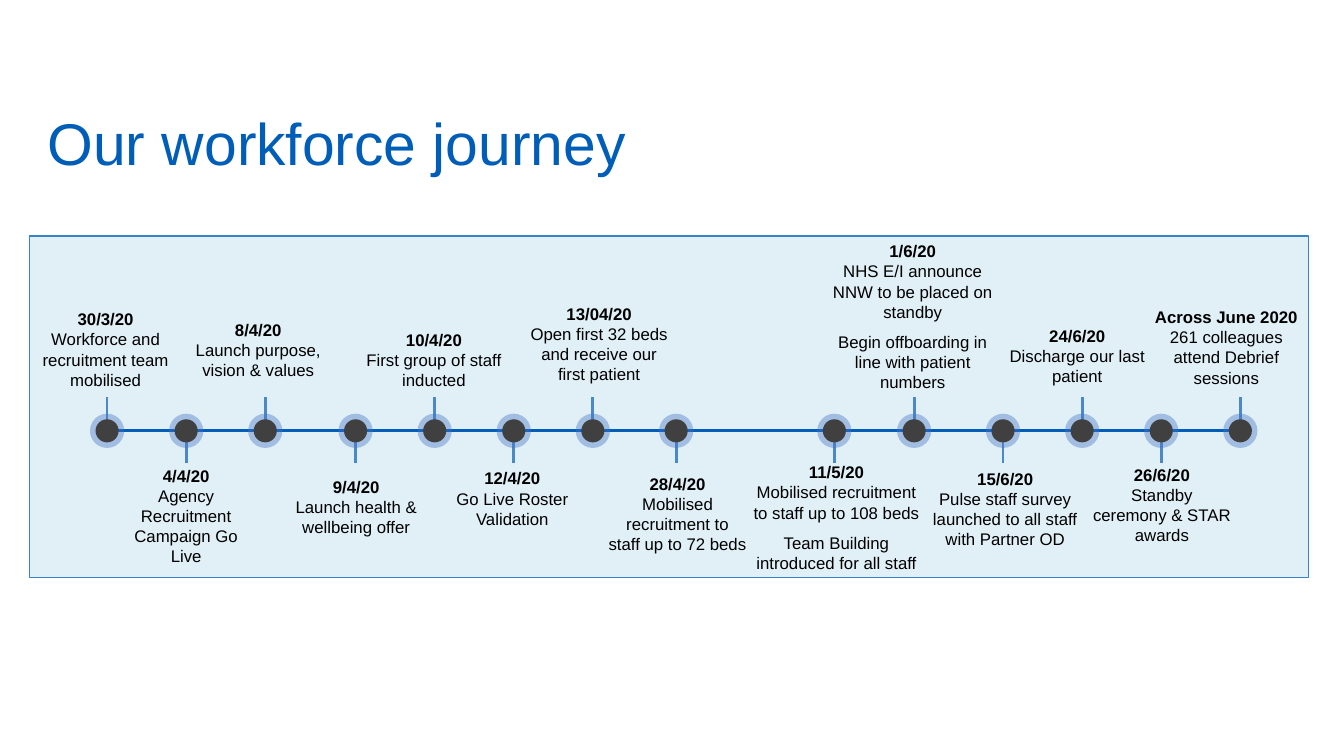
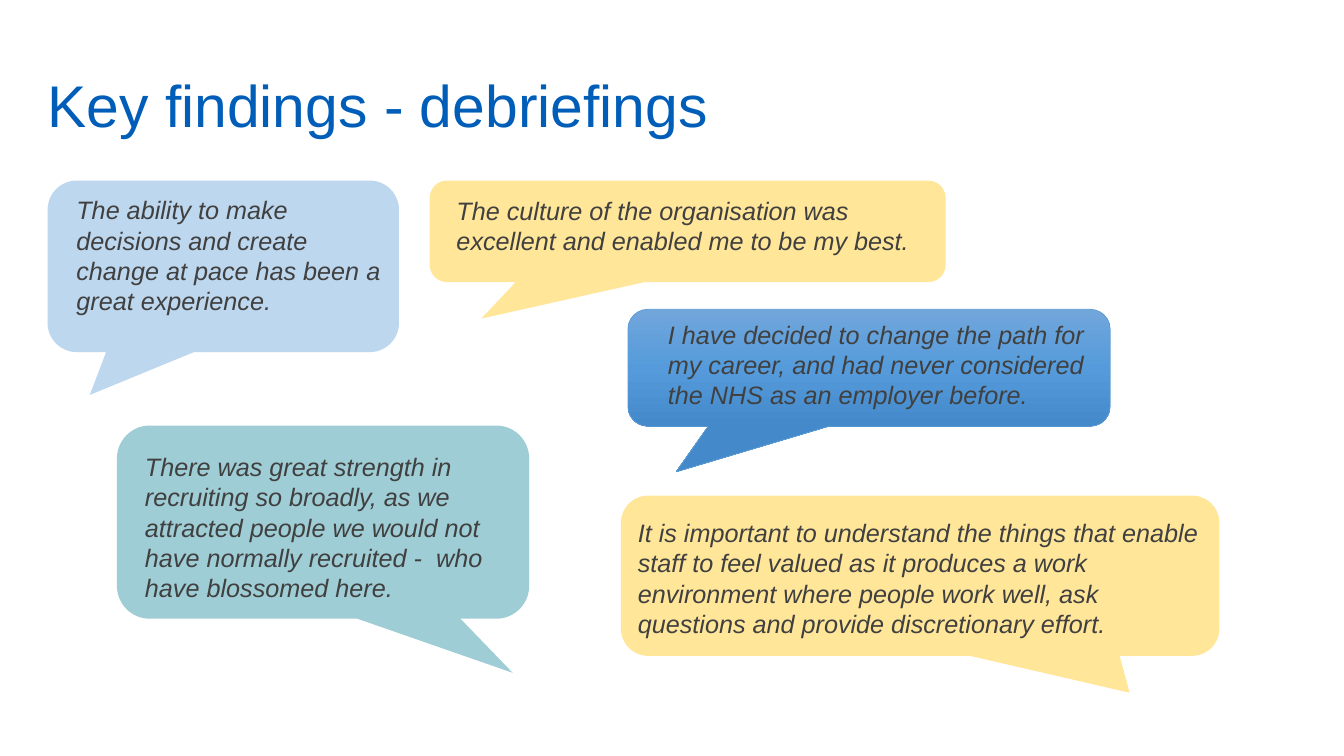
from lxml.etree import SubElement
from pptx import Presentation
from pptx.dml.color import RGBColor
from pptx.enum.shapes import MSO_CONNECTOR, MSO_SHAPE
from pptx.enum.text import MSO_ANCHOR, MSO_AUTO_SIZE, PP_ALIGN
from pptx.oxml.ns import qn
from pptx.util import Pt

FONT = "Arial"
COLOURS = {
    "title": "005EB8", "text": "000000", "dark": "404040",
    "panel": "E0F0F6", "panel_edge": "3783C7", "stem": "4B88C7",
    "axis": "005DB8", "halo": "4472C4", "teal": "9FCDD5",
    "pale_blue": "BDD7EE", "yellow": "FFE699", "blue_edge": "5B9BD5",
}
BLUE_GRADIENT = [(0, "71A6DB"), (50, "559BDB"), (100, "448ACA")]

# date, paragraphs, node x, label centre x and y, label width, label lines
# (x and y are measured from the corner of the timeline panel)
EVENTS = [
    ("30/3/20", ["Workforce and recruitment team mobilised"], 55.5, 54.5, 81, 113, 4),
    ("4/4/20", ["Agency Recruitment Campaign Go Live"], 112, 112, 200, 113, 5),
    ("8/4/20", ["Launch purpose, vision & values"], 168.5, 163.5, 81.5, 118, 3),
    ("9/4/20", ["Launch health & wellbeing offer"], 233, 233.5, 193.5, 113, 3),
    ("10/4/20", ["First group of staff inducted"], 289.5, 289, 88.5, 113, 3),
    ("12/4/20", ["Go Live Roster Validation"], 346, 345, 187.5, 113, 3),
    ("13/04/20", ["Open first 32 beds and receive our first patient"],
     402.5, 407, 77, 113, 4),
    ("28/4/20", ["Mobilised recruitment to staff up to 72 beds"],
     462, 463, 198.5, 113, 4),
    ("11/5/20", ["Mobilised recruitment to staff up to 108 beds",
                 "Team Building introduced for all staff"], 575, 576.5, 201, 134, 5.5),
    ("1/6/20", ["NHS E/I announce NNW to be placed on standby",
                "Begin offboarding in line with patient numbers"],
     632, 631, 57.5, 138, 7.5),
    ("15/6/20", ["Pulse staff survey launched to all staff with Partner OD"],
     695.5, 697, 195, 120, 4),
    ("24/6/20", ["Discharge our last patient"], 752, 748.5, 85.5, 113, 3),
    ("26/6/20", ["Standby ceremony & STAR awards"], 808.5, 809, 192, 113, 4),
    ("Across June 2020", ["261 colleagues attend Debrief sessions"],
     865, 855, 79.5, 128, 4),
]
AXIS_Y = 139.25

# callout box, pointer, fill, text offset and width, quote
QUOTES = [
    ((83.5, 304, 294.5, 138), (0.46, 0.78), "teal", (13, 15), 268.5,
     "There was great strength in recruiting so broadly, as we attracted people "
     "we would not have normally recruited -  who have blossomed here."),
    ((34, 129, 251, 122.5), (-0.38, 0.75), "pale_blue", (13.5, 6.5), 237.5,
     "The ability to make decisions and create change at pace has been a great "
     "experience."),
    ((307, 129, 368.5, 72.5), (-0.4, 0.86), "yellow", (12, 7), 344,
     "The culture of the organisation was excellent and enabled me to be my best."),
    ((448.5, 221, 344.5, 83.5), (-0.4, 0.89), "gradient", (21.5, 3.5), 340,
     "I have decided to change the path for my career, and had never considered "
     "the NHS as an employer before."),
    ((443.5, 354, 427.5, 114.5), (0.35, 0.73), "yellow", (5, 12), 414.5,
     "It is important to understand the things that enable staff to feel valued "
     "as it produces a work environment where people work well, ask questions "
     "and provide discretionary effort."),
]


def colour(name):
    return RGBColor.from_string(COLOURS[name])


def style(para, size, name, bold=False, italic=False):
    for span in para.runs:
        font = span.font
        font.name, font.size = FONT, Pt(size)
        font.bold, font.italic = bold, italic
        font.color.rgb = colour(name)


def add_box(page, kind, left, top, width, height, fill):
    shape = page.shapes.add_shape(kind, Pt(left), Pt(top), Pt(width), Pt(height))
    shape.shadow.inherit = False
    shape.line.fill.background()
    if fill == "gradient":
        shape.fill.gradient()
        shape.fill.gradient_angle = 270
        stops = shape.fill._xPr.find(qn("a:gradFill")).find(qn("a:gsLst"))
        for stop in list(stops):
            stops.remove(stop)
        for position, value in BLUE_GRADIENT:
            stop = SubElement(stops, qn("a:gs"), pos=str(position * 1000))
            SubElement(stop, qn("a:srgbClr"), val=value)
    else:
        shape.fill.solid()
        shape.fill.fore_color.rgb = colour(fill)
    return shape


def add_edge(shape, name, width):
    shape.line.color.rgb = colour(name)
    shape.line.width = Pt(width)


def add_line(page, x1, y1, x2, y2, name, arrow=False):
    line = page.shapes.add_connector(
        MSO_CONNECTOR.STRAIGHT, Pt(x1), Pt(y1), Pt(x2), Pt(y2))
    add_edge(line, name, 2)
    if arrow:
        SubElement(line.line._get_or_add_ln(), qn("a:tailEnd"), type="arrow")
    SubElement(line._element.spPr, qn("a:effectLst"))


def add_text(page, left, top, width, height):
    box = page.shapes.add_textbox(Pt(left), Pt(top), Pt(width), Pt(height))
    box.text_frame.word_wrap = True
    return box.text_frame


def add_page(deck, title, title_height):
    page = deck.slides.add_slide(deck.slide_layouts[5])
    box = page.shapes.title
    box.left, box.top = Pt(34), Pt(34)
    box.width, box.height = Pt(623.5), Pt(title_height)
    frame = box.text_frame
    frame.text = title
    frame.auto_size = MSO_AUTO_SIZE.NONE
    frame.vertical_anchor = MSO_ANCHOR.BOTTOM
    frame.margin_left = frame.margin_right = 0
    frame.margin_top = frame.margin_bottom = 0
    para = frame.paragraphs[0]
    para.alignment, para.line_spacing = PP_ALIGN.LEFT, 0.9
    style(para, 42, "title")
    return page


def add_label(page, centre_x, centre_y, width, lines, date, paragraphs):
    height = lines * 14.4 + 7.2
    frame = add_text(page, centre_x - width / 2, centre_y - height / 2, width, height)
    frame.vertical_anchor = MSO_ANCHOR.MIDDLE
    for index, text in enumerate([date] + paragraphs):
        para = frame.add_paragraph() if index else frame.paragraphs[0]
        para.text = text
        para.alignment = PP_ALIGN.CENTER
        if index > 1:
            para.space_before = Pt(7)
        style(para, 12, "text", bold=index == 0)


def add_node(page, x, y):
    for diameter, name in ((24.5, "halo"), (16.5, "dark")):
        disc = add_box(page, MSO_SHAPE.OVAL, x - diameter / 2, y - diameter / 2,
                       diameter, diameter, name)
        if name == "halo":
            tint = disc.fill._xPr.find(qn("a:solidFill"))[0]
            SubElement(tint, qn("a:alpha"), val="40000")


def add_timeline(page, left, top, width, height):
    # Panel
    panel = add_box(page, MSO_SHAPE.RECTANGLE, left, top, width, height, "panel")
    add_edge(panel, "panel_edge", 1)
    axis_y = top + AXIS_Y
    # Stems and labels
    for date, paragraphs, node_x, label_x, label_y, label_width, lines in EVENTS:
        above = label_y < AXIS_Y
        start, end = (-24, 3.5) if above else (23, -6)
        add_line(page, left + node_x, axis_y + start, left + node_x, axis_y + end,
                 "stem", arrow=True)
        add_label(page, left + label_x, top + label_y, label_width, lines,
                  date, paragraphs)
    # Axis and nodes
    nodes = [left + event[2] for event in EVENTS]
    add_line(page, nodes[0] - 8, axis_y, nodes[-1] + 8, axis_y, "axis")
    for node_x in nodes:
        add_node(page, node_x, axis_y)


def add_quote(page, box, pointer, fill, offset, text_width, quote):
    left, top, width, height = box
    callout = add_box(page, MSO_SHAPE.ROUNDED_RECTANGULAR_CALLOUT, *box, fill)
    callout.adjustments[0], callout.adjustments[1] = pointer
    callout.adjustments[2] = 0.17
    if fill == "gradient":
        add_edge(callout, "blue_edge", 0.5)
    frame = add_text(page, left + offset[0], top + offset[1], text_width, height)
    frame.text = quote
    style(frame.paragraphs[0], 18, "dark", italic=True)


def main():
    deck = Presentation()
    deck.slide_width, deck.slide_height = Pt(960), Pt(540)

    journey = add_page(deck, "Our workforce journey", 93)
    add_timeline(journey, 21, 168.5, 913.5, 244)

    findings = add_page(deck, "Key findings - debriefings", 66)
    for quote in QUOTES:
        add_quote(findings, *quote)

    deck.save("out.pptx")


if __name__ == "__main__":
    main()
